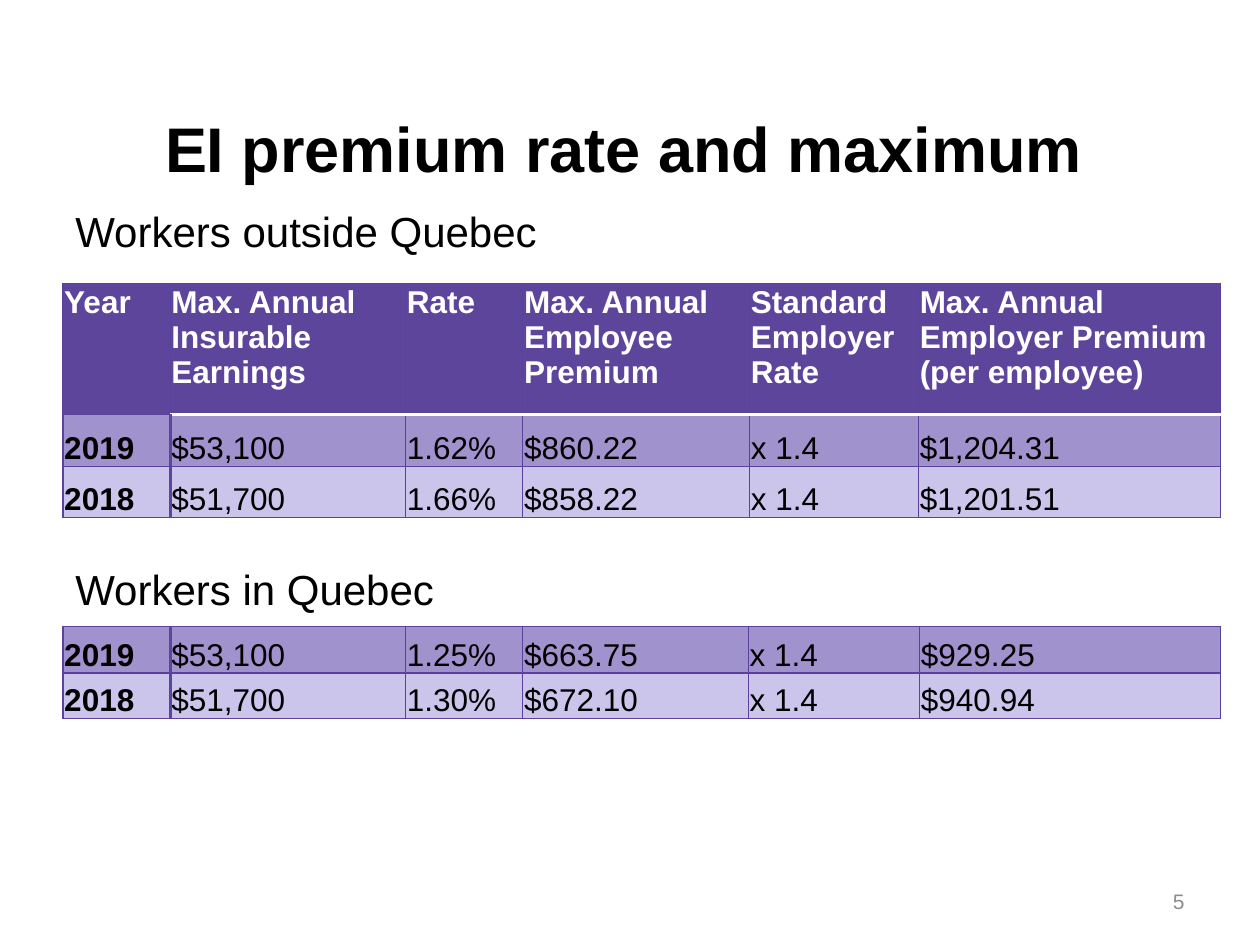
from lxml.etree import SubElement
from pptx import Presentation
from pptx.dml.color import RGBColor
from pptx.enum.text import MSO_ANCHOR, PP_ALIGN
from pptx.oxml.ns import qn
from pptx.util import Pt

BLACK = RGBColor(0x00, 0x00, 0x00)
WHITE = RGBColor(0xFF, 0xFF, 0xFF)
GREY = RGBColor(0x8C, 0x8C, 0x8C)
PURPLE = RGBColor(0x5E, 0x45, 0x9C)
BORDER = RGBColor(0x5B, 0x41, 0x9B)
DARK_BAND = RGBColor(0xA0, 0x92, 0xCD)
LIGHT_BAND = RGBColor(0xCC, 0xC5, 0xEB)

THIN, THICK = 0.75, 2

HEADER = ["Year", "Max. Annual Insurable Earnings", "Rate",
          "Max. Annual Employee Premium", "Standard Employer Rate",
          "Max. Annual Employer Premium (per employee)"]
OUTSIDE_QUEBEC = [
    ["2019", "$53,100", "1.62%", "$860.22", "x 1.4", "$1,204.31"],
    ["2018", "$51,700", "1.66%", "$858.22", "x 1.4", "$1,201.51"],
]
IN_QUEBEC = [
    ["2019", "$53,100", "1.25%", "$663.75", "x 1.4", "$929.25"],
    ["2018", "$51,700", "1.30%", "$672.10", "x 1.4", "$940.94"],
]


class SlideBuilder:
    font_name = "Arial"
    cell_inset = 0.72

    def __init__(self, slide):
        self.slide = slide

    def set_font(self, paragraph, size, color, bold=False):
        font = paragraph.font
        font.name, font.size, font.bold = self.font_name, Pt(size), bold
        font.color.rgb = color

    def title(self, text, left, top, width, height):
        shape = self.slide.shapes.title
        shape.left, shape.top = Pt(left), Pt(top)
        shape.width, shape.height = Pt(width), Pt(height)
        shape.text_frame.text = text
        shape.text_frame.vertical_anchor = MSO_ANCHOR.MIDDLE
        paragraph = shape.text_frame.paragraphs[0]
        paragraph.alignment = PP_ALIGN.CENTER
        self.set_font(paragraph, 36, BLACK, bold=True)

    def text(self, text, left, top, width, height, size=24, color=BLACK,
             align=PP_ALIGN.LEFT, anchor=MSO_ANCHOR.TOP):
        shape = self.slide.shapes.add_textbox(
            Pt(left), Pt(top), Pt(width), Pt(height))
        frame = shape.text_frame
        frame.word_wrap = True
        frame.vertical_anchor = anchor
        frame.text = text
        paragraph = frame.paragraphs[0]
        paragraph.alignment = align
        self.set_font(paragraph, size, color)

    def border(self, cell, side, color, width):
        line = SubElement(cell._tc.get_or_add_tcPr(), qn(f"a:ln{side}"),
                          w=str(Pt(width)))
        fill = SubElement(line, qn("a:solidFill"))
        SubElement(fill, qn("a:srgbClr"), val=str(color))

    def cell(self, cell, text, fill, color, bold, anchor, borders):
        cell.margin_left = cell.margin_right = Pt(self.cell_inset)
        cell.margin_top, cell.margin_bottom = Pt(self.cell_inset), 0
        cell.vertical_anchor = anchor
        cell.text = text
        self.set_font(cell.text_frame.paragraphs[0], 18, color, bold)
        for side in "LRTB":
            self.border(cell, side, *borders.get(side, (BORDER, THIN)))
        cell.fill.solid()
        cell.fill.fore_color.rgb = fill

    def table(self, rows, left, top, widths, heights, header=None):
        all_rows = ([header] if header else []) + rows
        table = self.slide.shapes.add_table(
            len(all_rows), len(widths), Pt(left), Pt(top),
            Pt(sum(widths)), Pt(sum(heights))).table
        table.first_row = header is not None
        table.horz_banding = False
        for column, width in zip(table.columns, widths):
            column.width = Pt(width)
        for row, height in zip(table.rows, heights):
            row.height = Pt(height)

        for row_index, values in enumerate(all_rows):
            is_header = header is not None and row_index == 0
            band = row_index - (header is not None)
            for column_index, value in enumerate(values):
                borders = {}
                # White rule below the header, right of the year column
                if header and column_index > 0 and row_index < 2:
                    borders["B" if is_header else "T"] = (WHITE, THICK)
                # Heavier rule beside the years
                if not is_header and column_index < 2:
                    borders["L" if column_index else "R"] = (PURPLE, THICK)
                cell = table.cell(row_index, column_index)
                if is_header:
                    self.cell(cell, value, PURPLE, WHITE, True,
                              MSO_ANCHOR.TOP, borders)
                else:
                    fill = LIGHT_BAND if band % 2 else DARK_BAND
                    self.cell(cell, value, fill, BLACK, column_index == 0,
                              MSO_ANCHOR.BOTTOM, borders)


def main():
    presentation = Presentation()
    presentation.slide_width, presentation.slide_height = Pt(720), Pt(540)
    title_only = presentation.slide_layouts[5]
    builder = SlideBuilder(presentation.slides.add_slide(title_only))

    builder.title("EI premium rate and maximum", 32.4, 39, 648, 90)

    # Outside Quebec
    builder.text("Workers outside Quebec", 36, 114, 648, 288)
    builder.table(OUTSIDE_QUEBEC, 36, 162,
                  [61.2, 134.6, 67, 129.6, 96.5, 172.8],
                  [75, 29.4, 29.4], header=HEADER)

    # In Quebec
    builder.text("Workers in Quebec", 36, 318.5, 648, 288)
    builder.table(IN_QUEBEC, 36, 358,
                  [61.2, 134.6, 67, 128.9, 97.9, 172.1], [26.6, 25.9])

    # Slide number
    builder.text("5", 516, 500.5, 168, 28.75, size=12, color=GREY,
                 align=PP_ALIGN.RIGHT, anchor=MSO_ANCHOR.MIDDLE)

    presentation.save("out.pptx")


if __name__ == "__main__":
    main()
